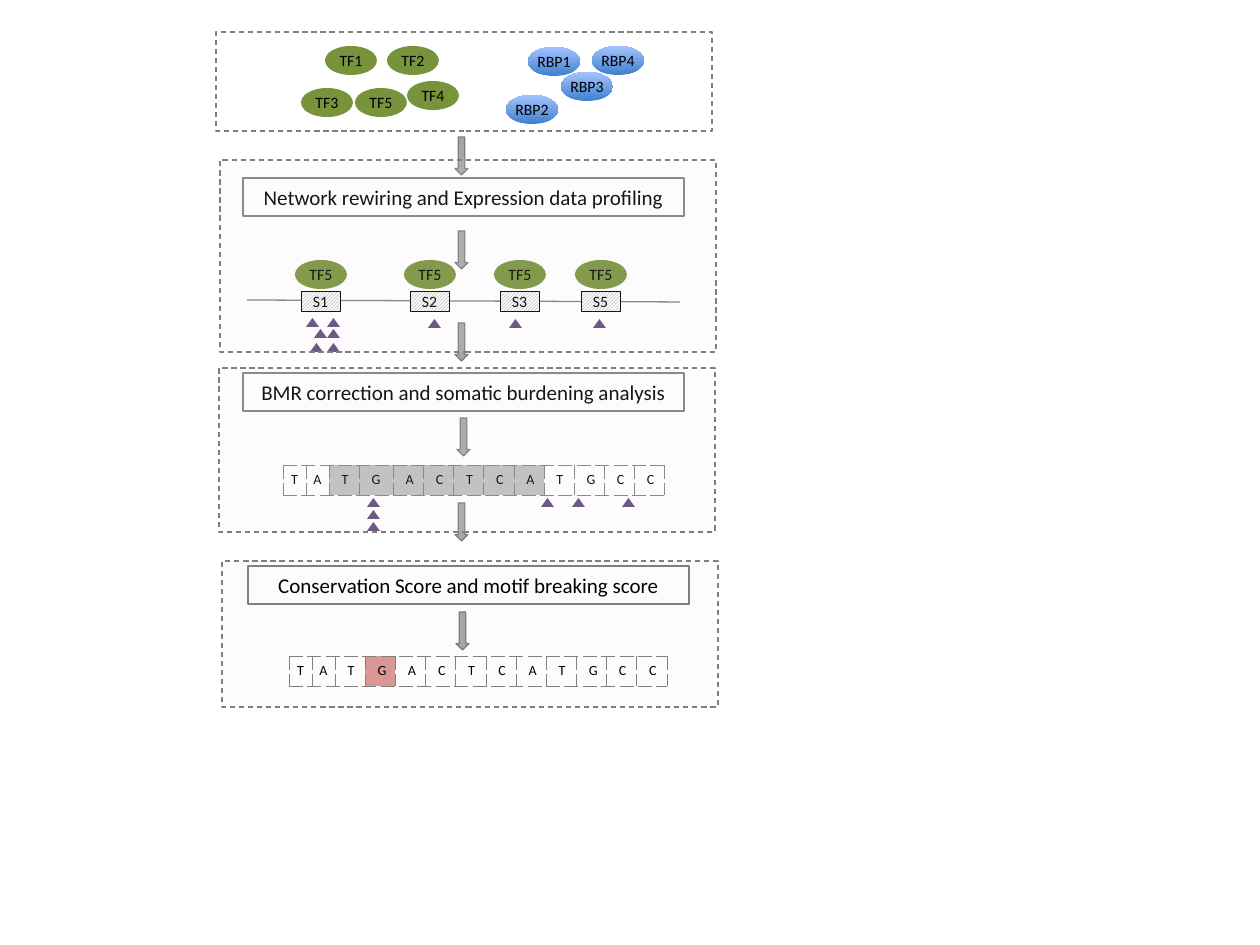
from dataclasses import dataclass
from typing import Optional

from lxml.etree import SubElement
from pptx import Presentation
from pptx.dml.color import RGBColor
from pptx.enum.dml import MSO_LINE, MSO_PATTERN
from pptx.enum.shapes import MSO_CONNECTOR, MSO_SHAPE
from pptx.enum.text import MSO_ANCHOR, PP_ALIGN
from pptx.oxml.ns import qn
from pptx.util import Emu, Inches, Pt

FONT = "Calibri"
BLACK, WHITE = "000000", "FFFFFF"
GREY, DARK_GREY = "808080", "7F7F7F"
ARROW, GREEN, PURPLE = "A6A6A6", "77933C", "604A7B"
BLUE_LOW, BLUE_HIGH = "3F80CE", "A4C4FF"
PANEL, MOTIF, BROKEN = "F2DCDB", "BFBFBF", "D99694"
SEQUENCE = "TATGACTCATGCC"


@dataclass
class Box:
    x: int
    y: int
    w: int
    h: int


@dataclass
class Label:
    text: str
    x: int
    y: int


@dataclass
class Sequence:
    x: int
    y: int
    widths: list[int]
    marked: range
    color: str


TOP_PANEL = Box(216, 32, 496, 99)
NETWORK_PANEL = Box(220, 160, 496, 192)
BURDEN_PANEL = Box(219, 368, 496, 164)
SCORE_PANEL = Box(222, 561, 496, 146)

TITLES = [
    Label("Network rewiring and Expression data profiling", 243, 178),
    Label("BMR correction and somatic burdening analysis", 243, 373),
    Label("Conservation Score and motif breaking score", 248, 566),
]
FACTORS = [
    Label("TF1", 325, 46), Label("TF2", 387, 46), Label("TF3", 301, 88),
    Label("TF4", 407, 81), Label("TF5", 355, 88),
]
BINDERS = [
    Label("RBP3", 561, 72), Label("RBP1", 528, 47),
    Label("RBP4", 592, 46), Label("RBP2", 506, 95),
]
SITES = [
    Label("S1", 301, 291), Label("S2", 410, 291),
    Label("S3", 500, 291), Label("S5", 581, 291),
]
ARROWS = [(455, 137), (455, 231), (455, 323), (457, 418), (455, 503), (456, 612)]
MUTATIONS = [
    (306, 318), (327, 318), (314, 329), (327, 329), (310, 343), (327, 343),
    (428, 319), (509, 319), (593, 319),
    (367, 498), (367, 510), (367, 522), (541, 498), (572, 498), (622, 498),
]
SEQUENCES = [
    Sequence(283, 465, [23, 23, 29, 34] + [29] * 9, range(2, 9), MOTIF),
    Sequence(289, 656, [23, 23] + [29] * 11, range(3, 4), BROKEN),
]


def px(n: int) -> Emu:
    return Emu(round(n * 914400 / 126))


def rgb(color: str) -> RGBColor:
    return RGBColor.from_string(color)


def add_shape(s, kind, box: Box, fill: Optional[str] = None,
              line: Optional[str] = None, width: float = 0.75):
    sp = s.shapes.add_shape(kind, px(box.x), px(box.y), px(box.w), px(box.h))
    sp.shadow.inherit = False
    if fill:
        sp.fill.solid()
        sp.fill.fore_color.rgb = rgb(fill)
    else:
        sp.fill.background()
    if line:
        sp.line.color.rgb = rgb(line)
        sp.line.width = Pt(width)
    else:
        sp.line.fill.background()
    return sp


def style_text(p, size: int) -> None:
    p.alignment = PP_ALIGN.CENTER
    p.font.size = Pt(size)
    p.font.name = FONT
    p.font.color.rgb = rgb(BLACK)


def set_text(sp, text: str, size: int) -> None:
    tf = sp.text_frame
    tf.word_wrap = False
    tf.margin_left = tf.margin_right = tf.margin_top = tf.margin_bottom = 0
    tf.vertical_anchor = MSO_ANCHOR.MIDDLE
    tf.text = text
    style_text(tf.paragraphs[0], size)


def add_panel(s, box: Box, tinted: bool = True) -> None:
    sp = add_shape(s, MSO_SHAPE.RECTANGLE, box, PANEL if tinted else None, DARK_GREY)
    sp.line.dash_style = MSO_LINE.DASH
    if tinted:
        color = sp.fill._xPr.find(qn("a:solidFill"))[0]
        SubElement(color, qn("a:alpha")).set("val", "10000")


def add_title(s, label: Label) -> None:
    sp = add_shape(s, MSO_SHAPE.RECTANGLE, Box(label.x, label.y, 441, 38), line=GREY)
    set_text(sp, label.text, 12)


def add_protein(s, label: Label, gradient: bool = False) -> None:
    sp = add_shape(s, MSO_SHAPE.OVAL, Box(label.x, label.y, 52, 29), GREEN)
    if gradient:
        sp.fill.gradient()
        sp.fill.gradient_angle = 90
        for stop, color in zip(sp.fill.gradient_stops, (BLUE_LOW, BLUE_HIGH)):
            stop.color.rgb = rgb(color)
    set_text(sp, label.text, 9)


def add_site(s, label: Label) -> None:
    sp = add_shape(s, MSO_SHAPE.RECTANGLE, Box(label.x, label.y, 39, 20),
                   line=BLACK, width=0.25)
    sp.fill.patterned()
    sp.fill.pattern = MSO_PATTERN.LIGHT_UPWARD_DIAGONAL
    sp.fill.fore_color.rgb = rgb(GREY)
    sp.fill.back_color.rgb = rgb(WHITE)
    set_text(sp, label.text, 9)


def add_strand(s, x1: int, y1: int, x2: int, y2: int) -> None:
    c = s.shapes.add_connector(MSO_CONNECTOR.STRAIGHT, px(x1), px(y1), px(x2), px(y2))
    c.line.color.rgb = rgb(DARK_GREY)
    c.line.width = Pt(0.75)
    SubElement(c._element.spPr, qn("a:effectLst"))


def add_borders(cell) -> None:
    tcPr = cell._tc.get_or_add_tcPr()
    for i, side in enumerate(("lnL", "lnR", "lnT", "lnB")):
        ln = tcPr.makeelement(qn(f"a:{side}"), {"w": str(Pt(0.25))})
        fill = SubElement(ln, qn("a:solidFill"))
        SubElement(fill, qn("a:srgbClr")).set("val", GREY)
        SubElement(ln, qn("a:prstDash")).set("val", "sysDash")
        tcPr.insert(i, ln)


def add_sequence(s, seq: Sequence) -> None:
    table = s.shapes.add_table(1, len(SEQUENCE), px(seq.x), px(seq.y),
                               px(sum(seq.widths)), px(24)).table
    table.first_row = table.horz_banding = False
    table.rows[0].height = px(24)
    for i, (base, width) in enumerate(zip(SEQUENCE, seq.widths)):
        table.columns[i].width = px(width)
        cell = table.cell(0, i)
        cell.text = base
        cell.vertical_anchor = MSO_ANCHOR.MIDDLE
        style_text(cell.text_frame.paragraphs[0], 8)
        if i < 2:
            cell.margin_left = cell.margin_right = 0
            cell.margin_top = cell.margin_bottom = 0
        if i in seq.marked:
            cell.fill.solid()
            cell.fill.fore_color.rgb = rgb(seq.color)
        else:
            cell.fill.background()
        add_borders(cell)


def main() -> None:
    prs = Presentation()
    prs.slide_width, prs.slide_height = Inches(10), Inches(7.5)
    s = prs.slides.add_slide(prs.slide_layouts[6])
    add_panel(s, SCORE_PANEL)
    add_panel(s, TOP_PANEL, tinted=False)
    for title in TITLES:
        add_title(s, title)
    for factor in FACTORS:
        add_protein(s, factor)
    for binder in BINDERS:
        add_protein(s, binder, gradient=True)
    add_strand(s, 247, 300, 680, 302)
    for site in SITES:
        add_protein(s, Label("TF5", site.x - 6, site.y - 31))
        add_site(s, site)
    for x, y in MUTATIONS:
        add_shape(s, MSO_SHAPE.ISOSCELES_TRIANGLE, Box(x, y, 13, 9), PURPLE)
    for seq in SEQUENCES:
        add_sequence(s, seq)
    for x, y in ARROWS:
        add_shape(s, MSO_SHAPE.DOWN_ARROW, Box(x, y, 13, 38), ARROW, DARK_GREY)
    add_panel(s, NETWORK_PANEL)
    add_panel(s, BURDEN_PANEL)
    prs.save("out.pptx")


if __name__ == "__main__":
    main()
